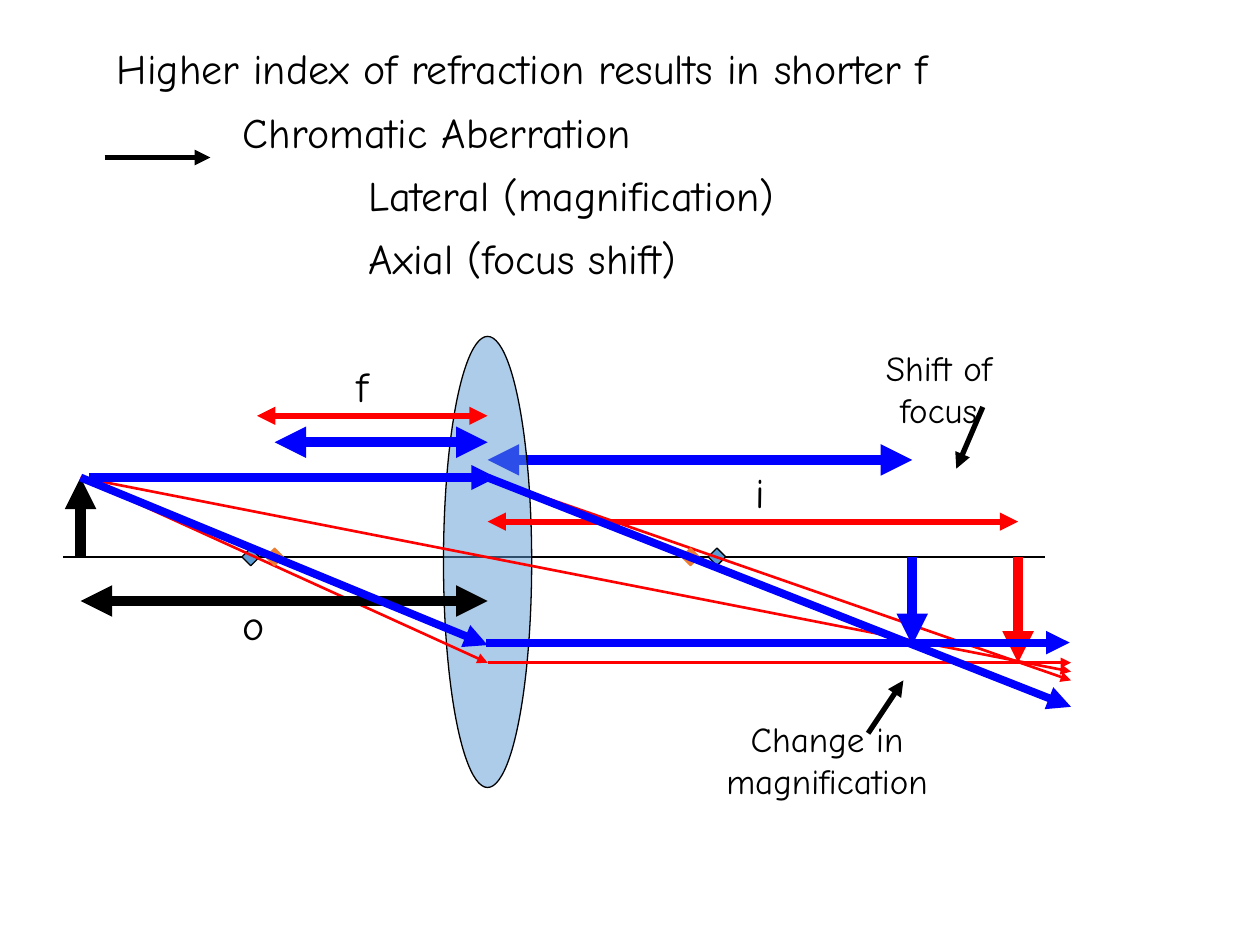
from lxml import etree
from pptx import Presentation
from pptx.dml.color import RGBColor
from pptx.enum.shapes import MSO_CONNECTOR, MSO_SHAPE
from pptx.enum.text import MSO_ANCHOR, PP_ALIGN
from pptx.oxml.ns import qn
from pptx.util import Inches, Pt

STRAIGHT = MSO_CONNECTOR.STRAIGHT
OVAL, DIAMOND = MSO_SHAPE.OVAL, MSO_SHAPE.DIAMOND
CENTER, MIDDLE = PP_ALIGN.CENTER, MSO_ANCHOR.MIDDLE

FONT = "Comic Neue"
COLORS = {"black": "000000", "red": "FF0000", "blue": "0000FF",
          "glass": "5B9BD5", "orange": "ED7D31"}

# Landmarks of the ray diagram, in inches
OBJECT_X, LENS_X, RAY_END_X = 0.64, 3.87, 8.5
BLUE_IMAGE_X, RED_IMAGE_X = 7.24, 8.08
AXIS_Y, OBJECT_Y = 4.42, 3.79
BLUE_IMAGE_Y, RED_IMAGE_Y = 5.12, 5.26
OBJECT_TIP = (OBJECT_X, OBJECT_Y)
LENS_ENTRY = (LENS_X, OBJECT_Y)
DIAMOND_SIZE = 0.14

HEADINGS = [
    ("Higher index of refraction results in shorter f", 1.1),
    ("\tChromatic Aberration", 0.8),
    ("\t\tLateral (magnification)", 0.8),
    ("\t\tAxial (focus shift)", 0.8),
]


def rgb(name):
    return RGBColor.from_string(COLORS[name])


def add_line(page, start, end, color, width, ends=("tailEnd",)):
    """Draw a line; ends names the a:ln children that get a triangle."""
    line = page.shapes.add_connector(
        STRAIGHT, *[Inches(value) for value in (*start, *end)])
    line.line.color.rgb = rgb(color)
    line.line.width = Pt(width)
    outline = line.line._get_or_add_ln()
    for name in ends:
        etree.SubElement(outline, qn(f"a:{name}"), type="triangle")
    etree.SubElement(line._element.spPr, qn("a:effectLst"))


def add_span(page, left, right, y, color, width):
    """Draw a horizontal measure with an arrowhead at each end."""
    add_line(page, (left, y), (right, y), color, width, ("headEnd", "tailEnd"))


def add_figure(page, kind, left, top, width, height, fill, outline, opacity=100):
    shape = page.shapes.add_shape(
        kind, *[Inches(value) for value in (left, top, width, height)])
    shape.shadow.inherit = False
    shape.fill.solid()
    shape.fill.fore_color.rgb = rgb(fill)
    shape.line.color.rgb = rgb(outline)
    shape.line.width = Pt(0.75)
    if opacity < 100:
        color = shape._element.spPr.find(qn("a:solidFill"))[0]
        etree.SubElement(color, qn("a:alpha"), val=str(opacity * 1000))


def add_focal_point(page, left, fill, outline):
    add_figure(page, DIAMOND, left, AXIS_Y - DIAMOND_SIZE / 2,
               DIAMOND_SIZE, DIAMOND_SIZE, fill, outline)


def add_box(page, left, top, width, height, wrap=True):
    box = page.shapes.add_textbox(
        *[Inches(value) for value in (left, top, width, height)])
    box.text_frame.word_wrap = wrap
    return box.text_frame


def add_text(para, text, size):
    span = para.add_run()
    span.text = text
    span.font.name = FONT
    span.font.size = Pt(size)
    span.font.color.rgb = rgb("black")


def add_headings(page):
    frame = add_box(page, 0.83, 0.25, 8.5, 3.53)
    for index, (text, spacing) in enumerate(HEADINGS):
        para = frame.add_paragraph() if index else frame.paragraphs[0]
        para.line_spacing = spacing
        if index:
            para.space_before = Pt(13)
        tabs = etree.SubElement(para._p.get_or_add_pPr(), qn("a:tabLst"))
        for stop in (1, 2):
            etree.SubElement(tabs, qn("a:tab"), pos=str(Inches(stop)), algn="l")
        add_text(para, text, 24)


def add_callout(page, text, left, top, width):
    frame = add_box(page, left, top, width, 0.41)
    frame.vertical_anchor = MIDDLE
    frame.paragraphs[0].alignment = CENTER
    add_text(frame.paragraphs[0], text, 20)


def add_symbol(page, text, left, top):
    frame = add_box(page, left, top, 0.31, 0.48, wrap=False)
    add_text(frame.paragraphs[0], text, 24)


def add_callouts(page):
    add_callout(page, "Shift of focus", 6.65, 2.88, 1.6)
    add_line(page, (7.8, 3.23), (7.59, 3.72), "black", 3)
    add_callout(page, "Change in magnification", 5.2, 5.82, 2.73)
    add_line(page, (6.89, 5.82), (7.17, 5.4), "black", 3)


def add_lens(page):
    add_line(page, (0.5, AXIS_Y), (8.29, AXIS_Y), "black", 0.75, ())
    add_figure(page, OVAL, LENS_X - 0.35, 2.67, 0.7, 3.58,
               "glass", "black", opacity=50)


def add_red_rays(page):
    lens_exit = (LENS_X, RED_IMAGE_Y)
    add_line(page, OBJECT_TIP, (RAY_END_X, 5.33), "red", 1.5)
    for left in (5.62, 1.92):
        add_focal_point(page, left, "glass", "black")
    add_line(page, (OBJECT_X, AXIS_Y), OBJECT_TIP, "black", 6)
    add_line(page, (0.71, OBJECT_Y), (3.94, OBJECT_Y), "blue", 4.75)
    add_line(page, LENS_ENTRY, (RAY_END_X, 5.4), "red", 1.5)
    add_line(page, OBJECT_TIP, lens_exit, "red", 1.5)
    add_line(page, lens_exit, (RAY_END_X, RED_IMAGE_Y), "red", 1.5)
    add_line(page, (RED_IMAGE_X, AXIS_Y), (RED_IMAGE_X, RED_IMAGE_Y), "red", 6)


def add_measures(page):
    add_span(page, 2.04, LENS_X, 3.3, "red", 3.5)
    add_span(page, LENS_X, RED_IMAGE_X, 4.14, "red", 3.5)
    add_span(page, LENS_X, OBJECT_X, 4.77, "black", 6)
    add_symbol(page, "f", 2.73, 2.81)
    add_symbol(page, "o", 1.83, 4.7)
    add_symbol(page, "i", 5.9, 3.65)


def add_blue_rays(page):
    for left in (2.11, 5.41):
        add_focal_point(page, left, "orange", "orange")
    add_line(page, LENS_ENTRY, (RAY_END_X, 5.61), "blue", 4.5)
    add_line(page, OBJECT_TIP, (LENS_X, BLUE_IMAGE_Y), "blue", 4.5)
    add_line(page, (3.86, 5.1), (8.49, 5.1), "blue", 4.5)
    add_line(page, (BLUE_IMAGE_X, AXIS_Y), (BLUE_IMAGE_X, BLUE_IMAGE_Y), "blue", 6)
    add_span(page, 2.18, LENS_X, 3.51, "blue", 6)


def main():
    deck = Presentation()
    deck.slide_width, deck.slide_height = Inches(10), Inches(7.5)
    page = deck.slides.add_slide(deck.slide_layouts[6])
    add_headings(page)
    add_line(page, (0.83, 1.25), (1.67, 1.25), "black", 3)
    add_span(page, LENS_X, BLUE_IMAGE_X, 3.65, "blue", 6)
    add_callouts(page)
    add_lens(page)
    add_red_rays(page)
    add_measures(page)
    add_blue_rays(page)
    deck.save("out.pptx")


if __name__ == "__main__":
    main()
